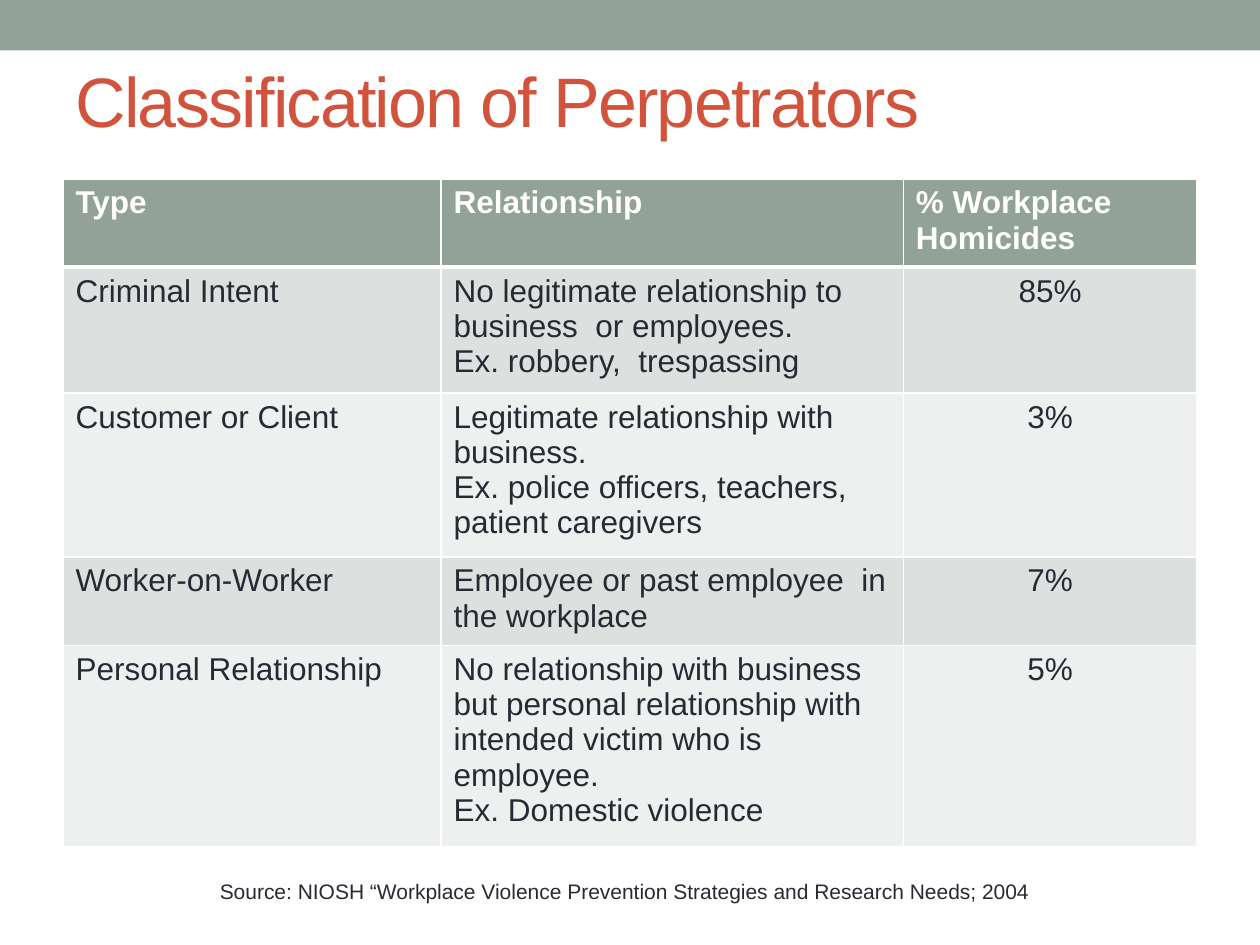
from dataclasses import dataclass

from lxml import etree
from pptx import Presentation
from pptx import util as u
from pptx.dml.color import RGBColor
from pptx.enum import shapes, text
from pptx.oxml import ns


@dataclass(frozen=True)
class Theme:
    font: str = "Arial"
    sage: str = "93A299"
    red: str = "D2533C"
    ink: str = "292934"
    white: str = "FFFFFF"
    bands: tuple = ("DCE0DE", "EEF0EF")
    title_size: int = 40
    table_size: int = 18
    source_size: int = 12


THEME = Theme()
COLUMN_WIDTHS = (3, 3.67, 2.33)
ROW_HEIGHTS = (0.65, 0.94, 1.22, 0.66, 1.49)
ROWS = (
    ("Type", "Relationship", "% Workplace Homicides"),
    ("Criminal Intent",
     "No legitimate relationship to business  or employees.\nEx. robbery,  trespassing",
     "85%"),
    ("Customer or Client",
     "Legitimate relationship with business.\n"
     "Ex. police officers, teachers, patient caregivers",
     "3%"),
    ("Worker-on-Worker", "Employee or past employee  in the workplace", "7%"),
    ("Personal Relationship",
     "No relationship with business but personal relationship with intended victim "
     "who is employee.\nEx. Domestic violence",
     "5%"),
)


def write_text(frame, content, size, color, bold=False, centered=False):
    """Fill a text frame and format every paragraph alike."""
    frame.text = content
    frame.word_wrap = True
    formats = {"name": THEME.font, "size": u.Pt(size), "bold": bold}
    for paragraph in frame.paragraphs:
        paragraph.alignment = text.PP_ALIGN.CENTER if centered else text.PP_ALIGN.LEFT
        for run in paragraph.runs:
            for name, value in formats.items():
                setattr(run.font, name, value)
            run.font.color.rgb = RGBColor.from_string(color)


def add_text(slide, box, content, size, color, centered=False):
    shape = slide.shapes.add_textbox(*map(u.Inches, box))
    write_text(shape.text_frame, content, size, color, centered=centered)
    shape.text_frame.vertical_anchor = text.MSO_ANCHOR.MIDDLE
    return shape


def add_band(slide):
    shape = slide.shapes.add_shape(
        shapes.MSO_SHAPE.RECTANGLE, 0, 0, u.Inches(10), u.Inches(0.4))
    shape.shadow.inherit = False
    shape.fill.solid()
    shape.fill.fore_color.rgb = RGBColor.from_string(THEME.sage)
    shape.line.fill.background()


def set_borders(cell, widths):
    """Draw white cell borders; they must come before the cell fill."""
    properties = cell._tc.get_or_add_tcPr()
    for index, (side, width) in enumerate(widths.items()):
        line = etree.Element(ns.qn(f"a:ln{side}"), w=str(u.Pt(width)))
        fill = etree.SubElement(line, ns.qn("a:solidFill"))
        etree.SubElement(fill, ns.qn("a:srgbClr"), val=THEME.white)
        properties.insert(index, line)


def add_table(slide):
    table = slide.shapes.add_table(
        len(ROWS), len(COLUMN_WIDTHS), u.Inches(0.5), u.Inches(1.42),
        u.Inches(sum(COLUMN_WIDTHS)), u.Inches(sum(ROW_HEIGHTS))).table
    for column, width in zip(table.columns, COLUMN_WIDTHS):
        column.width = u.Inches(width)
    for row, height in zip(table.rows, ROW_HEIGHTS):
        row.height = u.Inches(height)

    for row_index, values in enumerate(ROWS):
        header = row_index == 0
        fill = THEME.sage if header else THEME.bands[(row_index - 1) % 2]
        color = THEME.white if header else THEME.ink
        for column_index, value in enumerate(values):
            cell = table.cell(row_index, column_index)
            cell.fill.solid()
            cell.fill.fore_color.rgb = RGBColor.from_string(fill)
            write_text(cell.text_frame, value, THEME.table_size, color, bold=header,
                       centered=not header and column_index == 2)
            set_borders(cell, {"L": 1, "R": 1, "T": 3 if row_index == 1 else 1,
                               "B": 3 if header else 1})


def main():
    presentation = Presentation()
    presentation.slide_width = u.Inches(10)
    presentation.slide_height = u.Inches(7.5)
    slide = presentation.slides.add_slide(presentation.slide_layouts[6])

    # Top band and title with tightened letters
    add_band(slide)
    title = add_text(slide, (0.5, 0.25, 9, 1.08), "Classification of Perpetrators",
                     THEME.title_size, THEME.red)
    run = title.text_frame.paragraphs[0].runs[0]
    run.font._element.set("spc", "-100")

    # Perpetrator types
    add_table(slide)

    # Source line
    add_text(slide, (0.17, 6.92, 9.58, 0.3),
             "Source: NIOSH “Workplace Violence Prevention Strategies and Research Needs; 2004",
             THEME.source_size, THEME.ink, centered=True)

    presentation.save("out.pptx")


if __name__ == "__main__":
    main()
